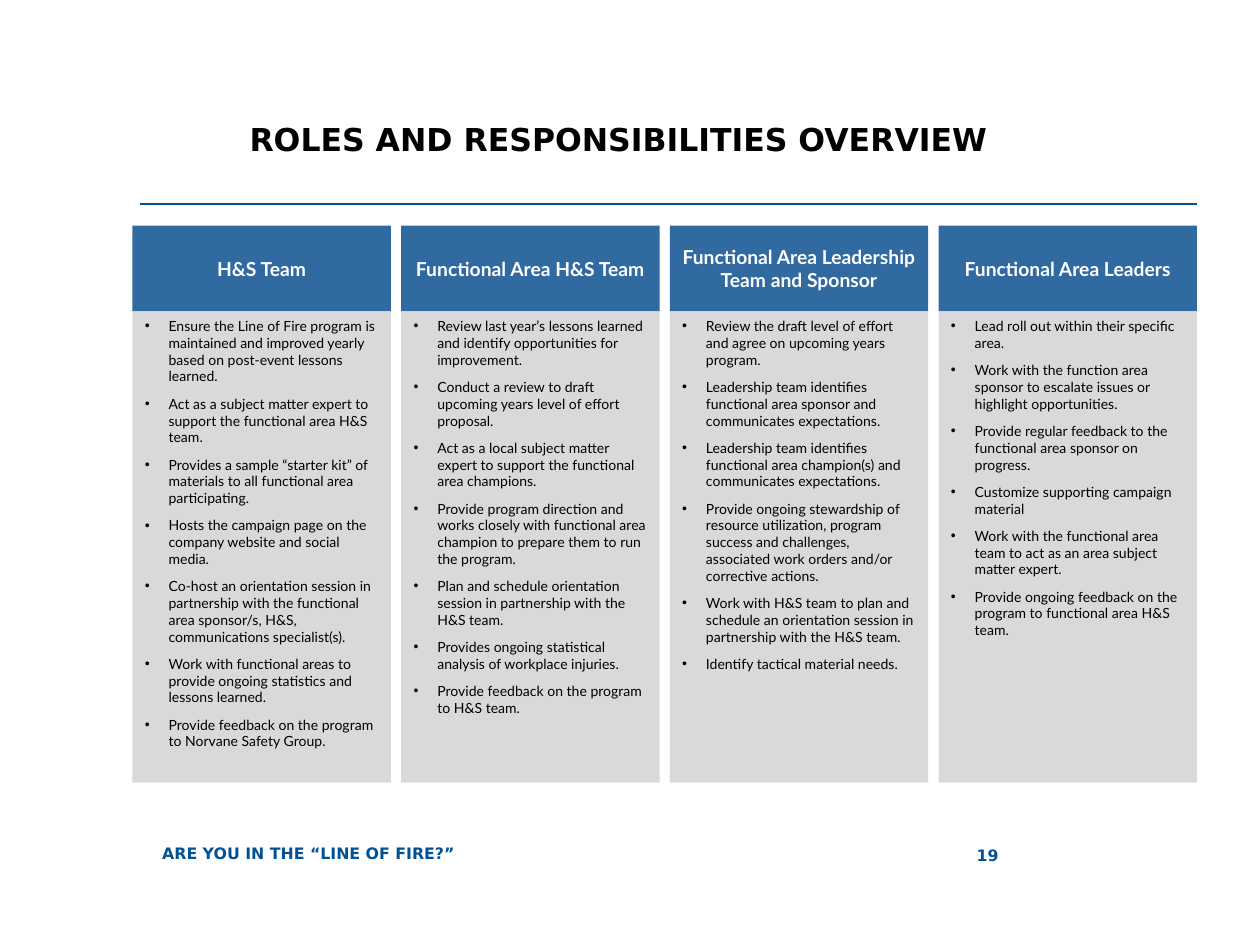
from lxml.etree import SubElement
from pptx import Presentation
from pptx.dml.color import RGBColor
from pptx.enum.shapes import MSO_CONNECTOR, MSO_SHAPE
from pptx.enum.text import MSO_ANCHOR, MSO_AUTO_SIZE, PP_ALIGN
from pptx.oxml.ns import qn
from pptx.util import Cm, Pt

TITLE = "ROLES AND RESPONSIBILITIES OVERVIEW"
FOOTER = "ARE YOU IN THE “LINE OF FIRE?”"
PAGE_NUMBER = "19"
ROLES = [
    ("H&S Team", [
        "Ensure the Line of Fire program is maintained and improved yearly based on post-event lessons learned.",
        "Act as a subject matter expert to support the functional area H&S team.",
        "Provides a sample “starter kit” of materials to all functional area participating.",
        "Hosts the campaign page on the company website and social media.",
        "Co-host an orientation session in partnership with the functional area sponsor/s, H&S, communications specialist(s).",
        "Work with functional areas to provide ongoing statistics and lessons learned.",
        "Provide feedback on the program to Norvane Safety Group.",
    ]),
    ("Functional Area H&S Team", [
        "Review last year’s lessons learned and identify opportunities for improvement.",
        "Conduct a review to draft upcoming years level of effort proposal.",
        "Act as a local subject matter expert to support the functional area champions.",
        "Provide program direction and works closely with functional area champion to prepare them to run the program.",
        "Plan and schedule orientation session in partnership with the H&S team.",
        "Provides ongoing statistical analysis of workplace injuries.",
        "Provide feedback on the program to H&S team.",
    ]),
    ("Functional Area Leadership Team and Sponsor", [
        "Review the draft level of effort and agree on upcoming years program.",
        "Leadership team identifies functional area sponsor and communicates expectations.",
        "Leadership team identifies functional area champion(s) and communicates expectations.",
        "Provide ongoing stewardship of resource utilization, program success and challenges, associated work orders and/or corrective actions.",
        "Work with H&S team to plan and schedule an orientation session in partnership with the H&S team.",
        "Identify tactical material needs.",
    ]),
    ("Functional Area Leaders", [
        "Lead roll out within their specific area.",
        "Work with the function area sponsor to escalate issues or highlight opportunities.",
        "Provide regular feedback to the functional area sponsor on progress.",
        "Customize supporting campaign material",
        "Work with the functional area team to act as an area subject matter expert.",
        "Provide ongoing feedback on the program to functional area H&S team.",
    ]),
]
COLORS = {"accent": "005295", "header": "316AA1", "panel": "D9D9D9",
          "black": "000000", "white": "FFFFFF"}
HEADING_FONT, BODY_FONT = "DejaVu Sans", "Lato"
LEFT, RIGHT, COLUMN_WIDTH = 2.67, 24.13, 5.21
HEADER_TOP, HEADER_HEIGHT, PANEL_HEIGHT = 4.55, 1.73, 9.5


def add_run(paragraph, text, font_name, size, color, bold=True):
    run = paragraph.add_run()
    run.text = text
    run.font.name = font_name
    run.font.size = Pt(size)
    run.font.bold = bold
    run.font.color.rgb = RGBColor.from_string(COLORS[color])


def add_block(slide, left, top, height, color, anchor):
    shape = slide.shapes.add_shape(
        MSO_SHAPE.RECTANGLE, Cm(left), Cm(top), Cm(COLUMN_WIDTH), Cm(height))
    shape.shadow.inherit = False
    shape.fill.solid()
    shape.fill.fore_color.rgb = RGBColor.from_string(COLORS[color])
    shape.line.fill.background()
    shape.text_frame.word_wrap = True
    shape.text_frame.vertical_anchor = anchor
    return shape.text_frame


def add_bullet(paragraph, text):
    properties = paragraph._p.get_or_add_pPr()
    properties.set("marL", str(Cm(0.48)))
    properties.set("indent", str(-Cm(0.48)))
    SubElement(properties, qn("a:buFont")).set("typeface", "Arial")
    SubElement(properties, qn("a:buChar")).set("char", "•")
    paragraph.alignment = PP_ALIGN.LEFT
    paragraph.space_after = Pt(6)
    add_run(paragraph, text, BODY_FONT, 8, "black", False)


def add_role(slide, left, name, duties):
    header = add_block(slide, left, HEADER_TOP, HEADER_HEIGHT, "header", MSO_ANCHOR.MIDDLE)
    header.paragraphs[0].alignment = PP_ALIGN.CENTER
    add_run(header.paragraphs[0], name, BODY_FONT, 11, "white")
    panel = add_block(slide, left, HEADER_TOP + HEADER_HEIGHT, PANEL_HEIGHT,
                      "panel", MSO_ANCHOR.TOP)
    for index, duty in enumerate(duties):
        add_bullet(panel.add_paragraph() if index else panel.paragraphs[0], duty)


def add_title(slide):
    title = slide.shapes.title
    title.left, title.top, title.width, title.height = Cm(5.03), Cm(2.29), Cm(19.15), Cm(2.03)
    frame = title.text_frame
    frame.auto_size = MSO_AUTO_SIZE.NONE
    frame.word_wrap = True
    frame.vertical_anchor = MSO_ANCHOR.TOP
    frame.margin_left = 0
    frame.paragraphs[0].alignment = PP_ALIGN.LEFT
    add_run(frame.paragraphs[0], TITLE, HEADING_FONT, 18, "black")


def add_rule(slide):
    rule = slide.shapes.add_connector(
        MSO_CONNECTOR.STRAIGHT, Cm(2.82), Cm(4.11), Cm(RIGHT), Cm(4.11))
    rule.line.color.rgb = RGBColor.from_string(COLORS["accent"])
    rule.line.width = Pt(1)
    SubElement(rule._element.spPr, qn("a:effectLst"))


def add_footer(slide, text, left, width, height, alignment):
    box = slide.shapes.add_textbox(Cm(left), Cm(16.74), Cm(width), Cm(height))
    frame = box.text_frame
    frame.word_wrap = True
    frame.vertical_anchor = MSO_ANCHOR.MIDDLE
    frame.paragraphs[0].alignment = alignment
    add_run(frame.paragraphs[0], text, HEADING_FONT, 9, "accent")


def main():
    presentation = Presentation()
    presentation.slide_width, presentation.slide_height = Cm(25.4), Cm(19.05)
    slide = presentation.slides.add_slide(presentation.slide_layouts[5])
    add_rule(slide)
    add_title(slide)
    add_footer(slide, FOOTER, 3.02, 14.07, 0.94, PP_ALIGN.LEFT)
    add_footer(slide, PAGE_NUMBER, 17.81, 2.57, 1.02, PP_ALIGN.RIGHT)
    step = (RIGHT - LEFT - COLUMN_WIDTH) / (len(ROLES) - 1)
    for index, (name, duties) in enumerate(ROLES):
        add_role(slide, LEFT + index * step, name, duties)
    presentation.save("out.pptx")


if __name__ == "__main__":
    main()
